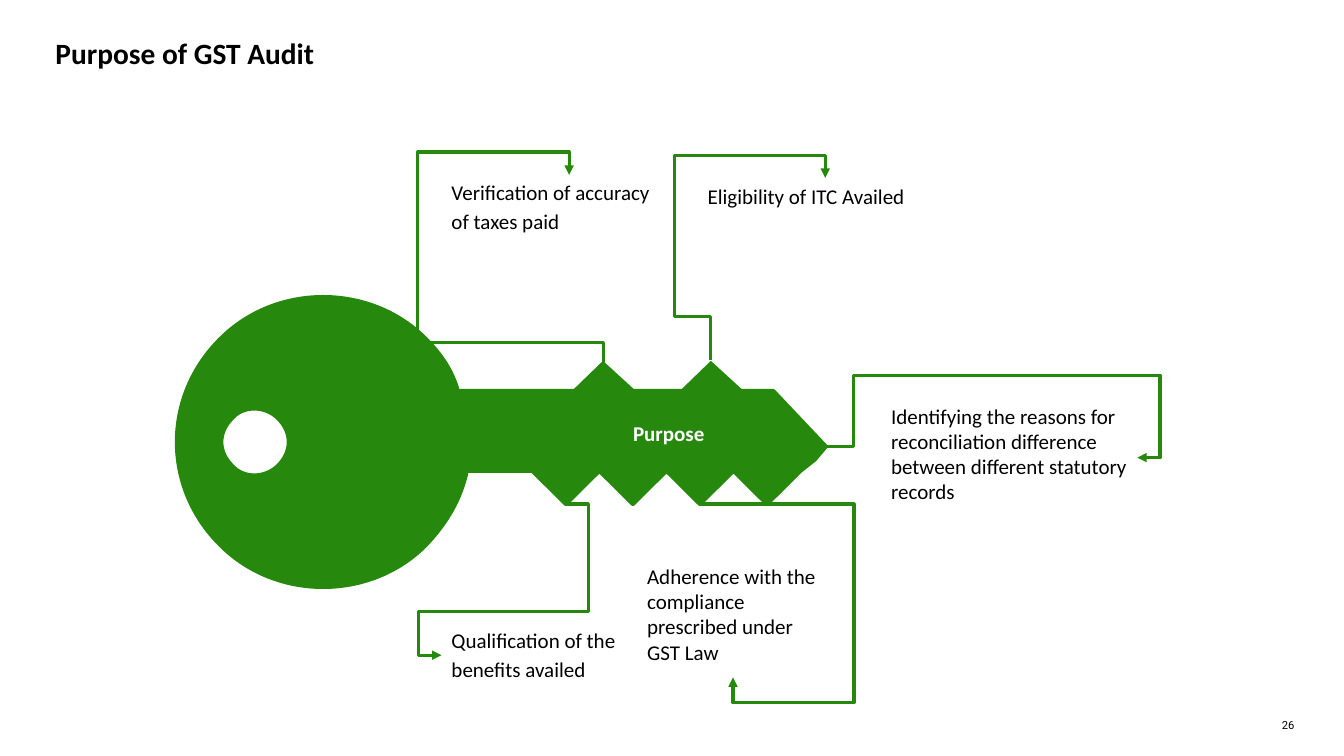
import pptx
import pptx.util
import pptx.dml.color
import pptx.enum.shapes
import pptx.enum.text
import pptx.oxml.ns

Inches = pptx.util.Inches
Pt = pptx.util.Pt
qn = pptx.oxml.ns.qn
COLORS = {"key": "26890D", "ink": "000000", "paper": "FFFFFF"}


class KeySlide:
    """Draws styled elements on the current slide."""

    def __init__(self, deck):
        self.page = deck.slides.add_slide(deck.slide_layouts[6])
        self.body = {"name": "Calibri", "size": Pt(15), "bold": False}

    def color(self, name):
        return pptx.dml.color.RGBColor.from_string(COLORS[name])

    def text(self, bounds, lines, color="ink", margin=None, wrap=True, after=0, align="LEFT", **style):
        box = self.page.shapes.add_textbox(*map(Inches, bounds))
        frame = box.text_frame
        frame.word_wrap = wrap
        if margin is not None:
            for side in ("left", "top", "right", "bottom"):
                setattr(frame, f"margin_{side}", Inches(margin))
        for index, line in enumerate(lines):
            para = frame.add_paragraph() if index else frame.paragraphs[0]
            para.alignment = pptx.enum.text.PP_ALIGN[align]
            para.space_after = Pt(after)
            span = para.add_run()
            span.text = line
            for key, value in (self.body | style).items():
                setattr(span.font, key, value)
            span.font.color.rgb = self.color(color)

    def paint(self, shape, width=0):
        shape.shadow.inherit = False
        shape.fill.solid()
        shape.fill.fore_color.rgb = self.color("key")
        if width:
            shape.line.color.rgb = self.color("key")
            shape.line.width = Pt(width)
        else:
            shape.line.fill.background()

    def outline(self, contours, width):
        builder = None
        curved = []
        for start, curve, edges in contours:
            points = [tuple(map(Inches, point)) for point in [start] + curve + edges]
            if builder is None:
                builder = self.page.shapes.build_freeform(*points[0], scale=1.0)
            else:
                builder.move_to(*points[0])
            builder.add_line_segments(points[1:], close=True)
            curved += [True] * len(curve) + [False] * len(edges)
        shape = builder.convert_to_shape()
        steps = list(shape._element.iter(qn("a:lnTo")))
        bends = [step for step, bent in zip(steps, curved) if bent]
        for first, second, third in zip(*[iter(bends)] * 3):
            bezier = first.makeelement(qn("a:cubicBezTo"), {})
            first.addprevious(bezier)
            for step in (first, second, third):
                bezier.append(step[0])
                step.getparent().remove(step)
        self.paint(shape, width)

    def triangle(self, bounds, peak):
        kind = pptx.enum.shapes.MSO_SHAPE.ISOSCELES_TRIANGLE
        shape = self.page.shapes.add_shape(kind, *map(Inches, bounds))
        shape.adjustments[0] = peak
        self.paint(shape)

    def arrow(self, bounds, bends, turn=0, flip=""):
        left, top, width, height = bounds
        xs, ys = (left, left + width), (top, top + height)
        if "h" in flip:
            xs = xs[::-1]
        if "v" in flip:
            ys = ys[::-1]
        line = self.page.shapes.add_connector(
            pptx.enum.shapes.MSO_CONNECTOR.ELBOW,
            Inches(xs[0]), Inches(ys[0]), Inches(xs[1]), Inches(ys[1]))
        line.line.color.rgb = self.color("key")
        line.line.width = Pt(2.25)
        properties = line._element.spPr
        if turn:
            properties.find(qn("a:xfrm")).set("rot", str(turn * 60000))
        geometry = properties.find(qn("a:prstGeom"))
        geometry.set("prst", f"bentConnector{len(bends) + 2}")
        guides = geometry.find(qn("a:avLst"))
        for number, bend in enumerate(bends, 1):
            guide = guides.makeelement(qn("a:gd"), {
                "name": f"adj{number}", "fmla": f"val {round(bend * 100000)}"})
            guides.append(guide)
        stroke = properties.find(qn("a:ln"))
        stroke.append(stroke.makeelement(qn("a:tailEnd"), {"type": "triangle"}))
        properties.append(properties.makeelement(qn("a:effectLst"), {}))


def main():
    deck = pptx.Presentation()
    deck.slide_width, deck.slide_height = Inches(13.33), Inches(7.5)
    slide = KeySlide(deck)

    slide.text((12.5, 7.13, 0.34, 0.13), ["26"], margin=0, align="RIGHT", name="Roboto", size=Pt(8))
    slide.text((0.55, 0.35, 12.21, 0.37), ["Purpose of GST Audit"], margin=0, size=Pt(21), bold=True)

    bow = [(4.49, 3.69), (4.38, 3.52), (4.22, 3.36),
           (3.67, 2.81), (2.74, 2.81), (2.19, 3.36),
           (1.61, 3.93), (1.61, 4.84), (2.19, 5.41),
           (2.74, 5.96), (3.67, 5.96), (4.22, 5.41),
           (4.43, 5.19), (4.57, 4.95), (4.63, 4.67)]
    teeth = [(5.28 + 0.3325 * step, 5 if step % 2 else 4.67) for step in range(9)]
    tip = [(8.08, 4.56), (8.19, 4.43), (7.67, 3.88)]
    hole = [(2.63, 4.75), (2.41, 4.75), (2.3, 4.62),
            (2.16, 4.48), (2.16, 4.29), (2.3, 4.15),
            (2.41, 4.02), (2.63, 4.02), (2.76, 4.15),
            (2.9, 4.29), (2.9, 4.48), (2.76, 4.62)]
    slide.outline([((4.54, 3.88), bow, teeth + tip), (hole[-1], hole, [])], 3)
    for left in (5.65, 6.72):
        slide.triangle((left, 3.58, 0.68, 0.32), 0.486)

    purposes = [
        ((4.38, 1.73, 2.54, 1.45), ["Verification of accuracy", "of taxes paid"]),
        ((6.92, 1.77, 2.54, 0.94), ["Eligibility of ITC Availed"]),
        ((4.38, 6.18, 2.54, 0.64), ["Qualification of the", "benefits availed"]),
        ((6.32, 5.54, 1.9, 1.18), ["Adherence with the compliance prescribed under GST Law"]),
        ((8.74, 3.95, 2.54, 1.18),
         ["Identifying the reasons for reconciliation difference between different statutory records"]),
    ]
    for bounds, lines in purposes:
        slide.text(bounds, lines, after=2.7)
    slide.text((6.18, 4.12, 0.92, 0.35), ["Purpose"], color="paper", wrap=False, bold=True)

    arrows = [
        ((4.87, 2.51, 1.89, 0.34), (0.12, 5.41, 1.12), 270, "v"),
        ((6.71, 2.1, 1.81, 1.14), (0.24, -0.31, 1.125), 90, "hv"),
        ((4.38, 5, 1.23, 1.5), (-0.184, 0.713, 1.184), 0, "h"),
        ((6.95, 5, 0.32, 1.72), (4.75, 1.145), 0, ""),
        ((8.19, 4.43, 3.09, 0.11), (0.09, -6.45, 1.073), 0, ""),
    ]
    for bounds, bends, turn, flip in arrows:
        slide.arrow(bounds, bends, turn, flip)

    deck.save("out.pptx")


if __name__ == "__main__":
    main()
